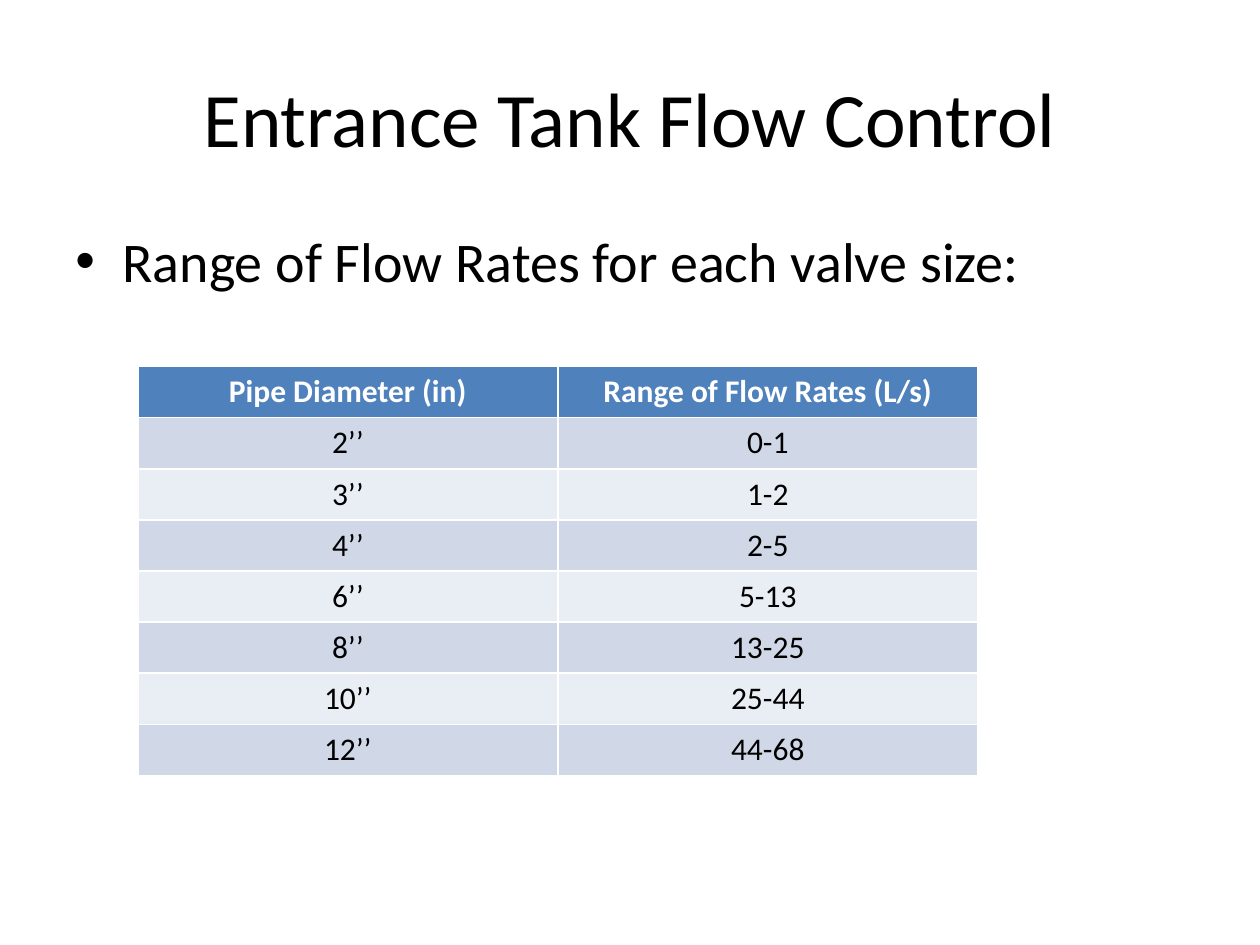
from lxml import etree
from pptx import Presentation
from pptx import util as u
from pptx.dml.color import RGBColor
from pptx.enum import text as t
from pptx.oxml.ns import qn

HUES = {"ink": "000000", "white": "FFFFFF", "head": "4F81BD",
        "dark": "D0D8E8", "light": "E9EDF4"}


def write(frame, words, size=18, hue="ink", bold=False, align=t.PP_ALIGN.CENTER):
    para = frame.paragraphs[0]
    para.alignment = align
    run = para.add_run()
    run.text = words
    run.font.name = "Calibri"
    run.font.size = u.Pt(size)
    run.font.bold = bold
    run.font.color.rgb = RGBColor.from_string(HUES[hue])
    return para


deck = Presentation()
deck.slide_width, deck.slide_height = u.Cm(25.4), u.Cm(19.05)
slide = deck.slides.add_slide(deck.slide_layouts[5])

# Title
title = slide.shapes.title
title.left, title.top = u.Cm(1.27), u.Cm(0.76)
title.width, title.height = u.Cm(22.86), u.Cm(3.18)
title.text_frame.vertical_anchor = t.MSO_ANCHOR.MIDDLE
write(title.text_frame, "Entrance Tank Flow Control", size=44)

# Bullet line
body = slide.shapes.add_textbox(u.Cm(1.27), u.Cm(4.45), u.Cm(22.86), u.Cm(12.57))
body.text_frame.word_wrap = True
para = write(body.text_frame, "Range of Flow Rates for each valve size:",
             size=32, align=t.PP_ALIGN.LEFT)
para.space_before = u.Pt(6.4)
props = para._p.get_or_add_pPr()
props.set("marL", str(u.Cm(0.95)))
props.set("indent", str(-u.Cm(0.95)))
etree.SubElement(props, qn("a:buFont")).set("typeface", "Arial")
etree.SubElement(props, qn("a:buChar")).set("char", "•")

# Flow rate table; its default style draws the white rules
rows = [("Pipe Diameter (in)", "Range of Flow Rates (L/s)"),
        ("2’’", "0-1"), ("3’’", "1-2"), ("4’’", "2-5"), ("6’’", "5-13"),
        ("8’’", "13-25"), ("10’’", "25-44"), ("12’’", "44-68")]
table = slide.shapes.add_table(len(rows), 2, u.Cm(2.78), u.Cm(7.39),
                               u.Cm(16.93), u.Cm(8.24)).table
for r, row in enumerate(rows):
    fill = "head" if r == 0 else ("dark" if r % 2 else "light")
    for c, words in enumerate(row):
        cell = table.cell(r, c)
        cell.fill.solid()
        cell.fill.fore_color.rgb = RGBColor.from_string(HUES[fill])
        write(cell.text_frame, words, bold=r == 0, hue="ink" if r else "white")

deck.save("out.pptx")
